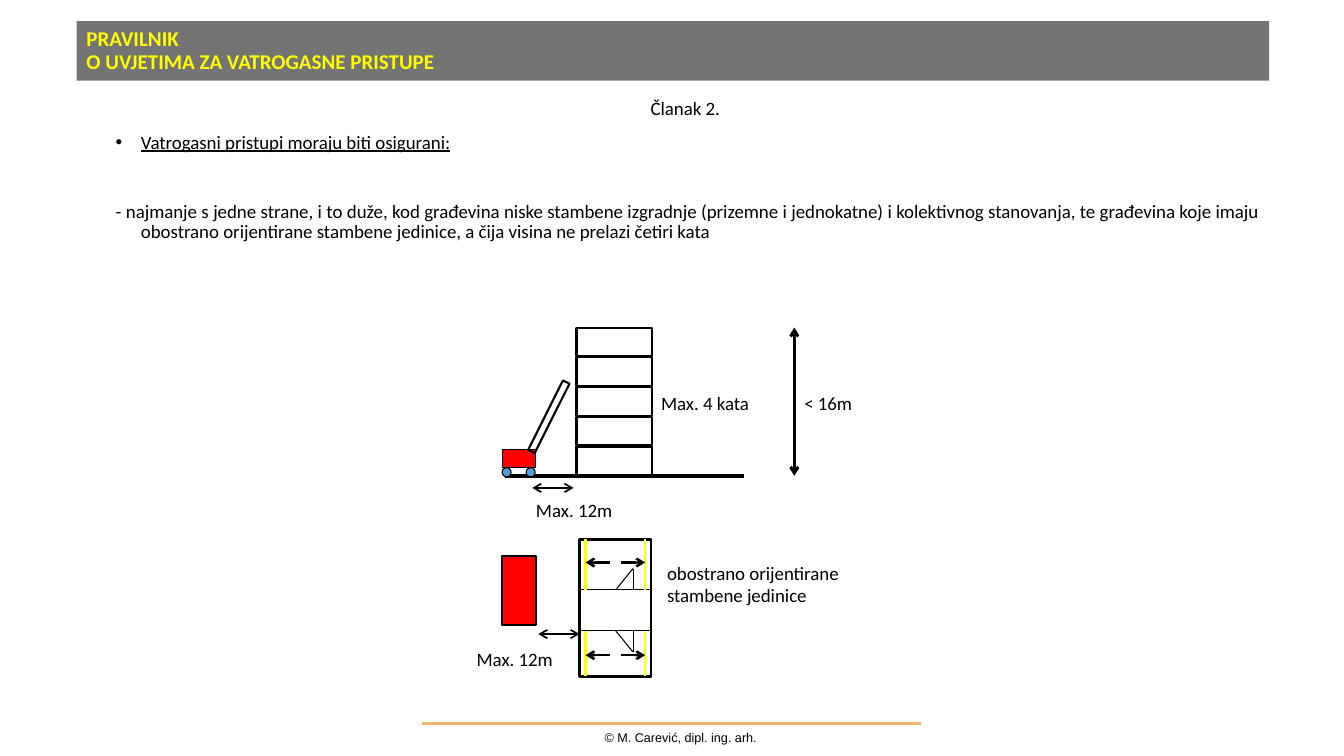
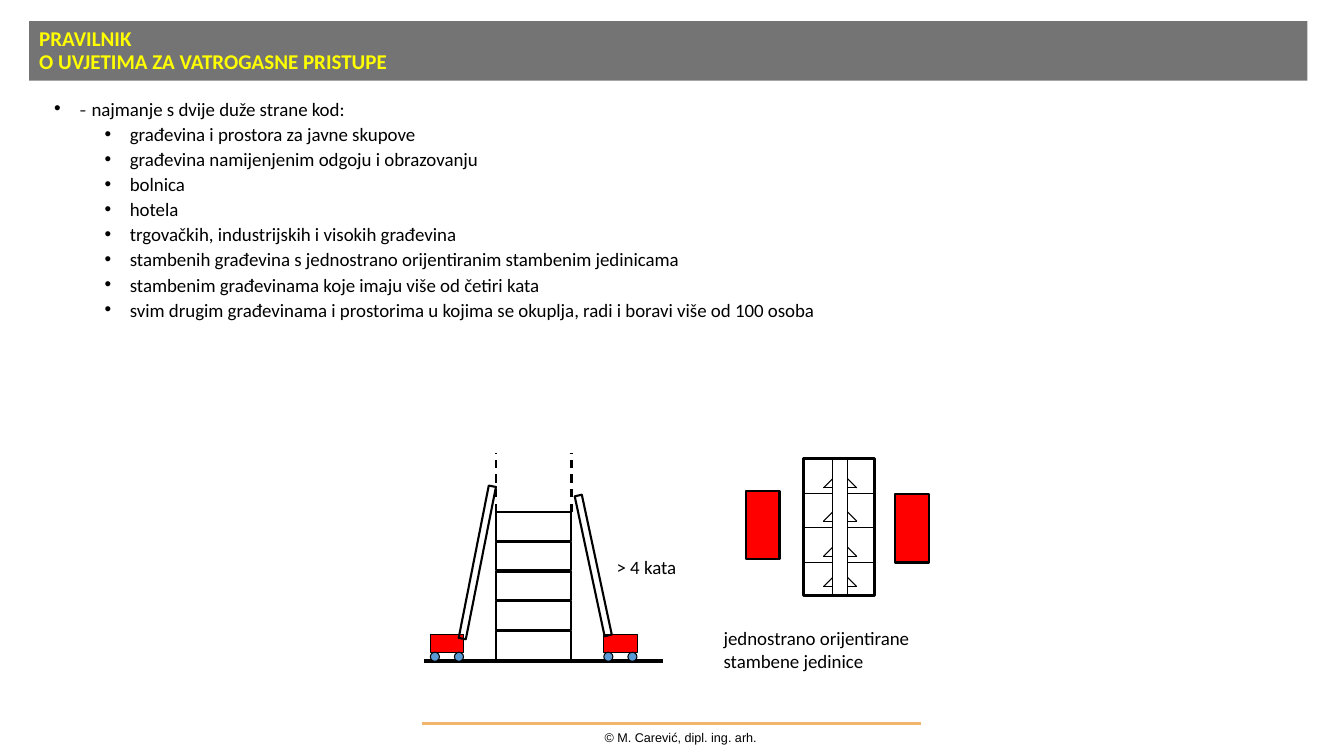
from pptx import Presentation
from pptx import util as u
from pptx.dml import color as colors
from pptx.enum import dml, shapes, text
from pptx.oxml import ns
from lxml import etree

BLACK, RED, YELLOW, BLUE = "000000", "FF0000", "FFFF00", "5B9BD5"
BAND, ACCENT = "333333", "F1B56D"
TITLE = ("PRAVILNIK", "O UVJETIMA ZA VATROGASNE PRISTUPE")
FLOOR_WIDTH, FLOOR_HEIGHT, FLOOR_STEP = 54, 20.4, 21.24
PLAN_WIDTH, PLAN_HEIGHT = 51, 98
LEFT, CENTER, JUSTIFY = text.PP_ALIGN.LEFT, text.PP_ALIGN.CENTER, text.PP_ALIGN.JUSTIFY


def paint(fill, color):
    """Give a fill a solid colour, or none."""
    if color is None:
        fill.background()
    else:
        fill.solid()
        fill.fore_color.rgb = colors.RGBColor.from_string(color)


def add_element(parent, tag, **attributes):
    """Append a drawing element to a parent."""
    return etree.SubElement(parent, ns.qn(tag), attributes)


def add_shape(page, kind, box, fill=None, line=BLACK, width=1.5, rotation=0):
    """Draw a preset shape in a box of points."""
    shape = page.shapes.add_shape(kind, *map(u.Pt, box))
    shape.shadow.inherit = False
    shape.rotation = rotation
    paint(shape.fill, fill)
    paint(shape.line.fill, line)
    if line:
        shape.line.width = u.Pt(width)
    return shape


def add_rect(page, box, **style):
    """Draw a rectangle."""
    return add_shape(page, shapes.MSO_SHAPE.RECTANGLE, box, **style)


def add_line(page, start, end, color=BLACK, width=0.75, dash=False, arrows=()):
    """Draw a straight line with optional head and tail arrows."""
    line = page.shapes.add_connector(
        shapes.MSO_CONNECTOR.STRAIGHT, *map(u.Pt, (*start, *end)))
    paint(line.line.fill, color)
    line.line.width = u.Pt(width)
    if dash:
        line.line.dash_style = dml.MSO_LINE.DASH
    outline = line.line.fill._xPr
    for name in arrows:
        add_element(outline, f"a:{name}End", type="arrow")
    add_element(outline.getparent(), "a:effectLst")
    return line


def write(frame, words, first=False, size=13.5, font="Calibri", color=BLACK, bold=False,
          underline=False, align=LEFT, level=0, margin=0, hanging=0, bullet=False,
          spacing=None, before=0):
    """Write one paragraph from a string or from pairs of text and font."""
    para = frame.paragraphs[0] if first else frame.add_paragraph()
    para.alignment = align
    para.level = level
    para.space_before = u.Pt(0 if first else before)
    if spacing:
        para.line_spacing = spacing
    properties = para._p.get_or_add_pPr()
    properties.set("marL", str(u.Pt(margin)))
    properties.set("indent", str(-u.Pt(hanging)))
    if bullet:
        add_element(properties, "a:buFont", typeface="Arial")
        add_element(properties, "a:buChar", char="•")
    for part, face in [(words, font)] if isinstance(words, str) else words:
        span = para.add_run()
        span.text = part
        span.font.name = face
        span.font.size = u.Pt(size)
        span.font.bold = bold
        span.font.underline = underline
        paint(span.font.fill, color)


def add_frame(page, box, wrap=True):
    """Add a text box and return its frame."""
    frame = page.shapes.add_textbox(*map(u.Pt, box)).text_frame
    frame.word_wrap = wrap
    return frame


def add_label(page, words, box, wrap=False, **style):
    """Add a short label."""
    write(add_frame(page, box, wrap), words, first=True, **style)


def add_page(deck, left, width):
    """Add a page with its title band and footer."""
    page = deck.slides.add_slide(deck.slide_layouts[6])
    band = add_rect(page, (left, 15.1, width, 42.5), fill=BAND, line=None)
    tint = band.fill._xPr.find(".//" + ns.qn("a:srgbClr"))
    add_element(tint, "a:alpha", val="68000")
    band.text_frame.word_wrap = True
    band.text_frame.vertical_anchor = text.MSO_ANCHOR.MIDDLE
    for index, words in enumerate(TITLE):
        write(band.text_frame, words, first=index == 0, size=15, color=YELLOW,
              bold=True, spacing=0.9)
    add_line(page, (301.7, 517), (658.1, 517), color=ACCENT, width=2.25)
    add_label(page, "© M. Carević, dipl. ing. arh.", (424.8, 517.7, 124.6, 18),
              size=9, font="Arial")
    return page


def draw_building(page, left, top):
    """Draw a five-storey elevation on its ground line."""
    for floor in range(5):
        add_rect(page, (left, top + floor * FLOOR_STEP, FLOOR_WIDTH, FLOOR_HEIGHT))
    ground = top + 106.2
    add_line(page, (left - 51, ground), (left + 119.5, ground), width=3)


def draw_truck(page, left, top, reach, rise, length, angle):
    """Draw a fire truck with a ladder placed relative to its body."""
    add_rect(page, (left, top, 24, 13), fill=RED, width=0.75)
    for offset in (17.2, 0):
        add_shape(page, shapes.MSO_SHAPE.OVAL, (left + offset, top + 13, 6.5, 6.5),
                  fill=BLUE, width=0.75)
    add_shape(page, shapes.MSO_SHAPE.FLOWCHART_DATA,
              (left + reach, top - rise, 6.5, length), rotation=angle)


def draw_truck_plan(page, left, top):
    """Draw a fire truck seen from above."""
    add_rect(page, (left, top, 24, 49), fill=RED)


def draw_two_sided_plan(page, left, top):
    """Draw a plan whose two dwellings face both sides."""
    add_rect(page, (left, top, PLAN_WIDTH, PLAN_HEIGHT), width=2)
    hinge = left + 38.2
    for wall, outer, leaf, view in ((36, 0, 20.9, 16.6), (65.5, 97.5, 80.6, 82.8)):
        inner, tip = top + wall, top + leaf
        add_line(page, (left, inner), (left + PLAN_WIDTH, inner))
        add_line(page, (hinge, inner), (hinge, tip))
        add_line(page, (hinge, tip), (left + 25.9, inner))
        for facade, start in ((4.3, 21.6), (46.8, 29.5)):
            add_line(page, (left + facade, top + outer), (left + facade, inner),
                     color=YELLOW, width=1.75)
            add_line(page, (left + start, top + view), (left + facade, top + view),
                     width=1.75, arrows=["tail"])


def draw_one_sided_plan(page, left, top):
    """Draw a plan whose dwellings lie on both sides of a corridor."""
    house = add_rect(page, (left, top, PLAN_WIDTH, PLAN_HEIGHT), width=2)
    for corridor, outer, swing, site in ((20.9, 0, -6.5, 1), (31.7, PLAN_WIDTH, 6.5, 3)):
        inner = left + corridor
        add_line(page, (inner, top + PLAN_HEIGHT), (inner, top))
        for wall in (25.2, PLAN_HEIGHT / 2, 74.2):
            line = add_line(page, (inner, top + wall), (left + outer, top + wall))
            if wall == PLAN_HEIGHT / 2:
                line.end_connect(house, site)
        for door in (20.9, 44.6, 69.8, 91.4):
            sill = top + door
            add_line(page, (inner, sill), (inner + swing, sill))
            add_line(page, (inner + swing, sill), (inner, sill - 6.5))


def build_low_housing(deck):
    """Build the page on access from one side."""
    page = add_page(deck, 54.7, 851.8)
    frame = add_frame(page, (75.6, 67, 830.9, 173.5))
    body = dict(margin=18, hanging=18, spacing=0.9)
    write(frame, "Članak 2. ", first=True, align=CENTER, **body)
    write(frame, "Vatrogasni pristupi moraju biti osigurani:", underline=True,
          bullet=True, align=JUSTIFY, before=10, **body)
    write(frame, "- najmanje s jedne strane, i to duže, kod građevina niske stambene "
          "izgradnje (prizemne i jednokatne) i kolektivnog stanovanja, te građevina "
          "koje imaju obostrano orijentirane stambene jedinice, a čija visina ne "
          "prelazi četiri kata", align=JUSTIFY, before=34.8, **body)
    both = ["head", "tail"]
    draw_building(page, 411.8, 234)
    draw_truck(page, 358.6, 321.1, reach=30.2, rise=51.1, length=55.4, angle=25.3)
    add_line(page, (567.4, 234), (567.4, 339.8), width=2, arrows=both)
    add_line(page, (380.2, 348.5), (409.7, 348.5), width=1.25, arrows=both)
    draw_two_sided_plan(page, 414, 385.2)
    draw_truck_plan(page, 358.6, 397.4)
    add_line(page, (384.5, 452.9), (414, 452.9), width=1.25, arrows=both)
    for words, left, top, width in (
            ("Max. 4 kata", 465.1, 276.5, 78.5), ("< 16m", 567.4, 276.5, 49),
            ("Max. 12m", 375.8, 352.8, 69.8), ("Max. 12m", 333.4, 459.4, 69.8)):
        add_label(page, words, (left, top, width, 23.8))
    add_label(page, "obostrano orijentirane stambene jedinice",
              (469.4, 397.4, 163.4, 40.3), wrap=True)


def build_public_buildings(deck):
    """Build the page on access from two sides."""
    page = add_page(deck, 20.9, 913)
    frame = add_frame(page, (31.7, 69.1, 839.5, 212.4))
    body = dict(hanging=18, spacing=0.8, bullet=True, align=JUSTIFY)
    write(frame, [("- ", "Montserrat"), ("najmanje s dvije duže strane kod:", "Calibri")],
          first=True, margin=18, **body)
    for words in (
            "građevina i prostora za javne skupove",
            "građevina namijenjenim odgoju i obrazovanju",
            "bolnica",
            "hotela",
            "trgovačkih, industrijskih i visokih građevina",
            "stambenih građevina s jednostrano orijentiranim stambenim jedinicama",
            "stambenim građevinama koje imaju više od četiri kata",
            "svim drugim građevinama i prostorima u kojima se okuplja, radi i boravi "
            "više od 100 osoba"):
        write(frame, words, level=1, margin=54, before=5, **body)
    left, top = 354.2, 365.8
    draw_building(page, left, top)
    for edge in (left, left + FLOOR_WIDTH):
        add_line(page, (edge, top), (edge, top - 42.5), width=1.5, dash=True)
    draw_truck(page, 307.4, 452.9, reach=30.3, rise=106.6, length=110.9, angle=10.5)
    draw_truck(page, 431.3, 452.9, reach=-10.8, rise=100.1, length=102.2, angle=167.2)
    add_label(page, "> 4 kata", (433.4, 393.1, 57.6, 23.8))
    draw_one_sided_plan(page, 573.8, 327.6)
    draw_truck_plan(page, 532.8, 350.6)
    draw_truck_plan(page, 639.4, 352.8)
    add_label(page, "jednostrano orijentirane stambene jedinice",
              (509.8, 444.2, 163.4, 40.3), wrap=True)


def main():
    """Build and save the deck."""
    deck = Presentation()
    deck.slide_width, deck.slide_height = u.Pt(960), u.Pt(540)
    build_low_housing(deck)
    build_public_buildings(deck)
    deck.save("out.pptx")


if __name__ == "__main__":
    main()
